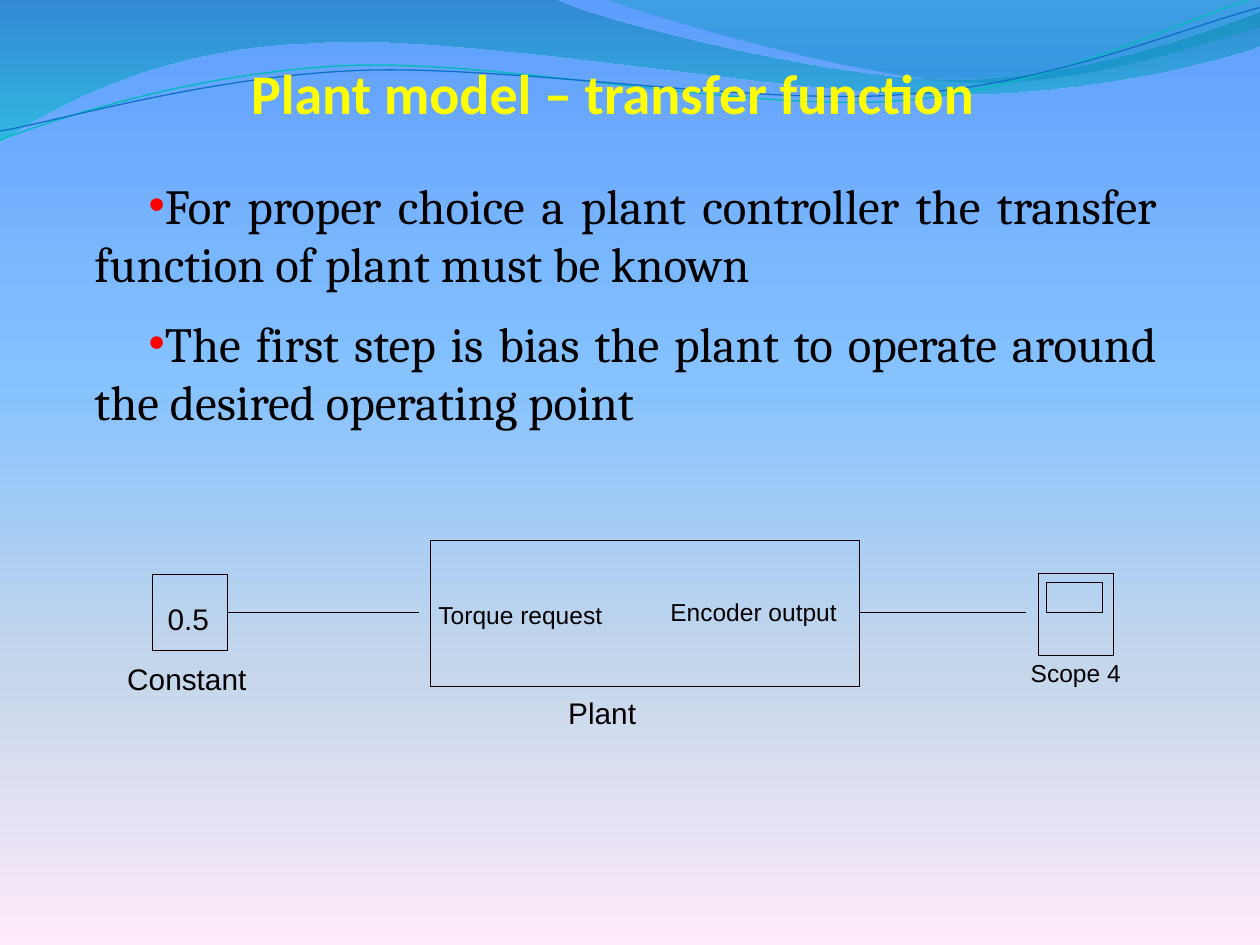
from math import cos, radians, sin

from lxml.etree import SubElement
from pptx import Presentation
from pptx.dml.color import RGBColor
from pptx.enum.shapes import MSO_CONNECTOR as Connector, MSO_SHAPE as Shape
from pptx.enum.text import MSO_ANCHOR as Anchor, PP_ALIGN as Align
from pptx.oxml.ns import qn
from pptx.util import Pt

PX = 9144  # EMU per px, 100 px to the inch

BACKGROUND = [(0, "5E9EFF", 100), (40, "85C2FF", 100),
              (70, "C4D6EB", 100), (100, "FFEBFA", 100)]

# Wave outlines: a start point, then steps of one point (line) or three (curve)
BANDS = [
    ([(0, 0), [(440, -1)],
      [(476, 17), (664, 63), (758, 63)], [(853, 63), (958, 26), (1000, 9)],
      [(1001, 36)],
      [(983, 44), (870, 76), (746, 75)], [(622, 75), (382, 28), (257, 34)],
      [(129, 36), (46, 83), (-1, 113)]],
     [(0, "0074A1", 45), (100, "00C6CF", 55)]),
    ([(479, -1),
      [(509, 11), (682, 62), (769, 65)], [(856, 69), (961, 32), (1000, 21)],
      [(1000, 0)]],
     [(0, "00A1A9", 30), (80, "008BBF", 45)]),
]
STROKE_TILT = -2.7
STROKES = [
    ([(0, 111), [(48, 93), (158, 57), (277, 52)],
      [(395, 47), (593, 89), (713, 80)], [(833, 71), (938, 15), (998, -2)]],
     (499, 57.5), "0AB8BF", 0.85),
    ([(0, 104), [(47, 96), (164, 61), (283, 56)],
      [(403, 51), (597, 84), (717, 75)], [(836, 67), (941, 21), (1000, 6)]],
     (499.5, 59), "0F6FC6", 0.75),
]
BULLETS = [
    "For proper choice a plant controller the transfer function of plant must be known",
    "The first step is bias the plant to operate around the desired operating point",
]


def color(value):
    return RGBColor.from_string(value)


def apply(target, values):
    for name, value in values.items():
        setattr(target, name, value)


def emu(*lengths):
    return [length * PX for length in lengths]


def paint_gradient(fill, owner, stops):
    """Fill the owner element with a vertical gradient of (position, colour, opacity)."""
    fill.solid()
    fill.fore_color.rgb = color("FFFFFF")
    solid = owner.find(qn("a:solidFill"))
    grad = owner.makeelement(qn("a:gradFill"), {"rotWithShape": "1"})
    stop_list = SubElement(grad, qn("a:gsLst"))
    for position, value, opacity in stops:
        stop = SubElement(stop_list, qn("a:gs"), pos=str(position * 1000))
        tint = SubElement(stop, qn("a:srgbClr"), val=value)
        SubElement(tint, qn("a:alpha"), val=str(opacity * 1000))
    SubElement(grad, qn("a:lin"), ang="5400000", scaled="0")
    owner.replace(solid, grad)


def style_line(shape, value, width):
    shape.line.color.rgb = color(value)
    # A zero width has to be written out, or the theme's width applies
    shape.element.spPr.find(qn("a:ln")).set("w", str(Pt(width)))


def turn(point, center, degrees):
    angle = radians(degrees)
    x, y = point[0] - center[0], point[1] - center[1]
    return (center[0] + x * cos(angle) - y * sin(angle),
            center[1] + x * sin(angle) + y * cos(angle))


def add_outline(page, left, top, outline, close, center=(0, 0), tilt=0):
    steps = outline[1:]
    points = [turn(point, center, -tilt)
              for point in outline[:1] + [point for step in steps for point in step]]
    points = [(round((left + x) * PX), round((top + y) * PX)) for x, y in points]
    builder = page.shapes.build_freeform(*points[0])
    builder.add_line_segments(points[1:], close=close)
    shape = builder.convert_to_shape()
    apply(shape, {"rotation": tilt % 360})
    shape.shadow.inherit = False
    # Join each run of three corners into one curve
    corners = iter(list(shape.element.iter(qn("a:lnTo"))))
    for step in steps:
        group = [next(corners) for _ in step]
        if len(group) == 3:
            curve = group[0].makeelement(qn("a:cubicBezTo"), {})
            group[0].addprevious(curve)
            for corner in group:
                curve.append(corner[0])
                corner.getparent().remove(corner)
    return shape


def add_text(page, box, texts, font, para_format=None, **frame_format):
    frame = page.shapes.add_textbox(*emu(*box)).text_frame
    apply(frame, {"margin_left": 0, "margin_top": 0, "margin_right": 0,
                  "margin_bottom": 0, "word_wrap": True, **frame_format})
    for index, text in enumerate(texts):
        para = frame.paragraphs[0] if index == 0 else frame.add_paragraph()
        apply(para, para_format or {})
        span = para.add_run()
        span.text = text
        apply(span.font, {key: value for key, value in font.items() if key != "color"})
        span.font.color.rgb = color(font.get("color", "000000"))
    return frame


def add_waves(page, left, top):
    for outline, stops in BANDS:
        band = add_outline(page, left, top, outline, True)
        paint_gradient(band.fill, band.element.spPr, stops)
        band.line.fill.background()
    for outline, center, value, width in STROKES:
        stroke = add_outline(page, left, top, outline, False, center, STROKE_TILT)
        stroke.fill.background()
        style_line(stroke, value, width)


def add_title(page, box):
    add_text(page, box, ["Plant model – transfer function"],
             {"name": "Calibri", "size": Pt(32), "bold": True, "color": "FFFF00"},
             {"alignment": Align.CENTER},
             vertical_anchor=Anchor.BOTTOM, margin_right=2 * PX)


def add_bullets(page, box):
    frame = add_text(page, box, BULLETS, {"name": "Cambria", "size": Pt(28)},
                     {"alignment": Align.JUSTIFY, "space_before": Pt(5.6),
                      "space_after": Pt(6)},
                     margin_top=6 * PX, margin_right=2 * PX, margin_bottom=5 * PX)
    for para in frame.paragraphs:
        props = para._p.get_or_add_pPr()
        for name, length in {"marL": 0, "marR": 5, "indent": 43}.items():
            props.set(name, str(length * PX))
        SubElement(SubElement(props, qn("a:buClr")), qn("a:srgbClr"), val="FF0000")
        SubElement(props, qn("a:buSzPct"), val="95000")
        SubElement(props, qn("a:buFont"), typeface="Arial")
        SubElement(props, qn("a:buChar"), char="•")


def add_wire(page, y, start, end):
    """A signal wire: a stub at each end and a middle part that overlaps both."""
    for x1, x2 in [(start, start + 11), (end, end - 20), (start + 6, end - 17)]:
        part = page.shapes.add_connector(Connector.STRAIGHT, *emu(x1, y, x2, y))
        style_line(part, "000000", 0)
        SubElement(part.element.spPr, qn("a:effectLst"))


def add_diagram(page, left, top):
    # Blocks: constant, plant, scope and its screen
    for x, y, width, height in [(20, 27, 60, 60), (241, 0, 340, 116),
                                (723, 26, 60, 65), (730, 33, 44, 24)]:
        block = page.shapes.add_shape(
            Shape.RECTANGLE, *emu(left + x, top + y, width, height))
        block.shadow.inherit = False
        block.fill.background()
        style_line(block, "000000", 0)
    # Signal wires
    for start, end in [(80, 231), (581, 713)]:
        add_wire(page, top + 57, left + start, left + end)
    # Labels
    for text, x, y, width, height, size in [
            ("Constant", 0, 95, 113, 35, 17), ("0.5", 32, 48, 45, 35, 17),
            ("Plant", 350, 122, 55, 29, 17),
            ("Torque request", 247, 47, 151, 29, 14),
            ("Encoder output", 431, 45, 152, 29, 14),
            ("Scope 4", 717, 93, 81, 29, 14)]:
        add_text(page, (left + x, top + y, width, height), [text],
                 {"name": "Arial", "size": Pt(size)}, word_wrap=False)


def main():
    deck = Presentation()
    apply(deck, {"slide_width": 1000 * PX, "slide_height": 750 * PX})
    page = deck.slides.add_slide(deck.slide_layouts[6])
    paint_gradient(page.background.fill, page.element.find(".//" + qn("p:bgPr"))
                   if page.background.fill.solid() else page.element.cSld.bg.bgPr,
                   BACKGROUND)
    add_waves(page, 0, 0)
    add_title(page, (58, 8, 859, 92))
    add_bullets(page, (75, 133, 850, 592))
    add_diagram(page, 101, 429)
    deck.save("out.pptx")


if __name__ == "__main__":
    main()
